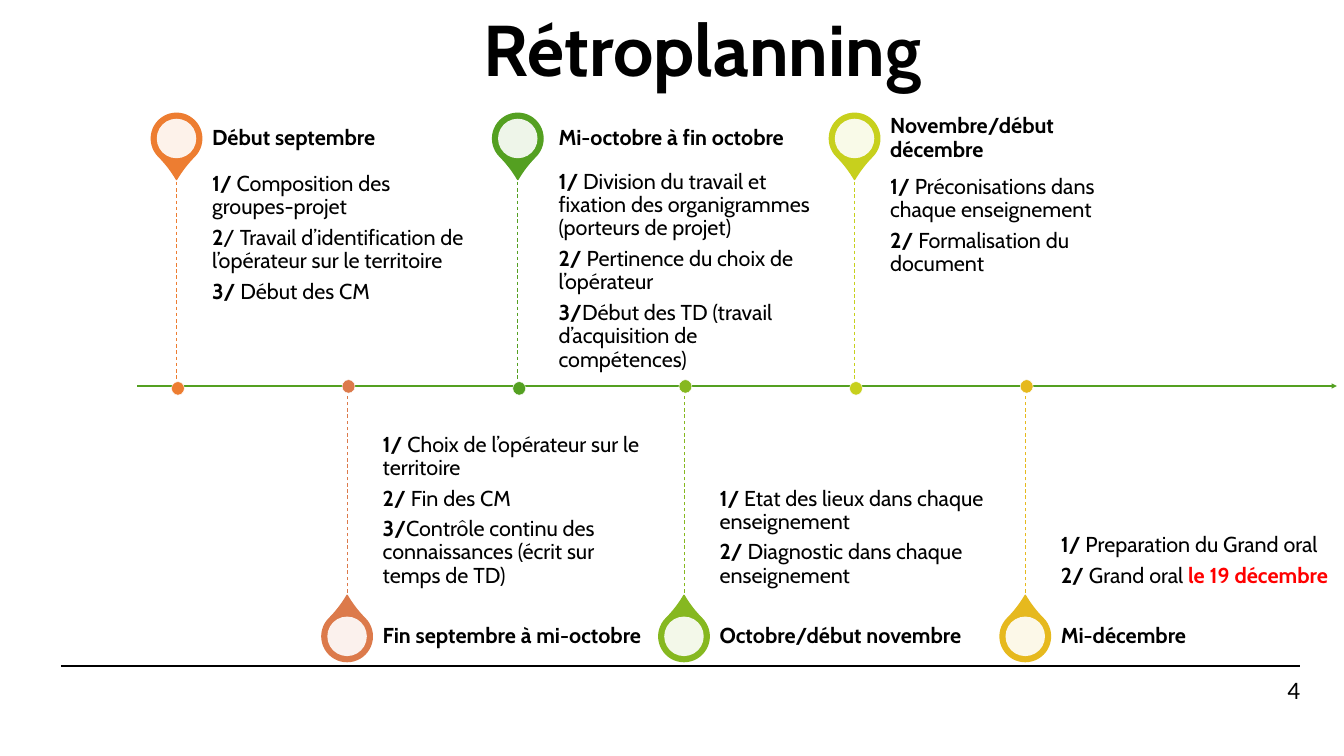
from dataclasses import dataclass

from lxml import etree
from pptx import Presentation
from pptx.dml.color import RGBColor
from pptx.enum import dml, shapes, text
from pptx.oxml.ns import qn
from pptx.util import Pt

BLACK, WHITE, RED, GREEN = "000000", "FFFFFF", "FF0000", "54A021"
AXIS_Y = 429.8
PIN_SIZE, LENS_SIZE = 56.2, 44
LABEL_OFFSET, LABEL_WIDTH = 39.6, 303


@dataclass
class Milestone:
    """Steps are tuples: bold number, plain wording, optional red ending."""
    x: float
    colour: str
    heading: str
    steps: list
    body_top: float = 0
    label_offset: float = LABEL_OFFSET
    label_width: float = LABEL_WIDTH


ABOVE = [
    Milestone(196.6, "ED7D31", "Début septembre", [
        ("1/", " Composition des groupes-projet"),
        ("2", "/ Travail d’identification de l’opérateur sur le territoire"),
        ("3/", " Début des CM")], body_top=180),
    Milestone(576.7, GREEN, "Mi-octobre à fin octobre", [
        ("1/", " Division du travail et fixation des organigrammes (porteurs de projet)"),
        ("2/", " Pertinence du choix de l’opérateur"),
        ("3/", "Début des TD (travail d’acquisition de compétences)")],
        body_top=178, label_offset=45.4, label_width=292),
    Milestone(951.8, "C7D01D", "Novembre/début décembre", [
        ("1/ ", "Préconisations dans chaque enseignement"),
        ("2/ ", "Formalisation du document")], body_top=183.6),
]
BELOW = [
    Milestone(386.6, "DC7A4B", "Fin septembre à mi-octobre", [
        ("1/ ", "Choix de l’opérateur sur le territoire"),
        ("2/ ", "Fin des CM"),
        ("3/", "Contrôle continu des connaissances (écrit sur temps de TD)")]),
    Milestone(761.8, "86B820", "Octobre/début novembre", [
        ("1/ ", "Etat des lieux dans chaque enseignement"),
        ("2/", " Diagnostic dans chaque enseignement")]),
    Milestone(1141.9, "E6B91E", "Mi-décembre", [
        ("1/", " Preparation du Grand oral"),
        ("2/", " Grand oral ", "le 19 décembre")]),
]


def rgb(colour):
    return RGBColor.from_string(colour)


def add_text(slide, box, paragraphs, size=24, font="Cabin", bold=True,
             align=text.PP_ALIGN.LEFT, anchor=text.MSO_ANCHOR.TOP,
             insets=(0, 0, 0, 0), line_spacing=0.9):
    """Each paragraph is a tuple of runs: lead, plain wording, red ending."""
    frame = slide.shapes.add_textbox(*map(Pt, box)).text_frame
    frame.word_wrap = True
    frame.vertical_anchor = anchor
    (frame.margin_left, frame.margin_top,
     frame.margin_right, frame.margin_bottom) = map(Pt, insets)
    styles = [(bold, BLACK), (False, BLACK), (True, RED)]
    for index, runs in enumerate(paragraphs):
        paragraph = frame.add_paragraph() if index else frame.paragraphs[0]
        paragraph.alignment = align
        paragraph.line_spacing = line_spacing
        if index < len(paragraphs) - 1:
            paragraph.space_after = Pt(8.2)
        for wording, (is_bold, colour) in zip(runs, styles):
            run = paragraph.add_run()
            run.text = wording
            run.font.name, run.font.size = font, Pt(size)
            run.font.bold = is_bold
            run.font.color.rgb = rgb(colour)


def add_line(slide, start, end, colour, width, dashed=False, arrow=False):
    line = slide.shapes.add_connector(
        shapes.MSO_CONNECTOR.STRAIGHT, *map(Pt, (*start, *end)))
    line.line.color.rgb = rgb(colour)
    line.line.width = Pt(width)
    if dashed:
        line.line.dash_style = dml.MSO_LINE.DASH
    if arrow:
        etree.SubElement(line.line._get_or_add_ln(), qn("a:tailEnd"), type="triangle")
    etree.SubElement(line._element.spPr, qn("a:effectLst"))


def add_centred_shape(slide, kind, x, y, width, height, fill, outline=None,
                      outline_width=1, alpha=None):
    shape = slide.shapes.add_shape(
        kind, *map(Pt, (x - width / 2, y - height / 2, width, height)))
    shape.shadow.inherit = False
    shape.fill.solid()
    shape.fill.fore_color.rgb = rgb(fill)
    if alpha:
        colour = shape._element.spPr.find(qn("a:solidFill"))[0]
        etree.SubElement(colour, qn("a:alpha"), val=str(alpha * 1000))
    if outline:
        shape.line.color.rgb = rgb(outline)
        shape.line.width = Pt(outline_width)
    else:
        shape.line.fill.background()
    return shape


def add_pin(slide, x, y, colour, rotation):
    pin = add_centred_shape(slide, shapes.MSO_SHAPE.TEAR, x, y, PIN_SIZE, PIN_SIZE,
                            colour, colour, 1.5)
    pin.adjustments[0] = 1.15
    pin.rotation = rotation
    add_centred_shape(slide, shapes.MSO_SHAPE.OVAL, x, y, LENS_SIZE, LENS_SIZE,
                      WHITE, alpha=90)


def add_milestone(slide, milestone, above):
    x, colour = milestone.x, milestone.colour
    left, width = x + milestone.label_offset, milestone.label_width
    if above:
        pin_y, rotation, stem_end, dot_y = 154.2, 135, 195.6, AXIS_Y + 2.6
        body_box = (left, milestone.body_top, width, 265)
        body_insets, body_anchor = (0, 12.2, 12.2, 18), text.MSO_ANCHOR.TOP
    else:
        pin_y, rotation, stem_end, dot_y = 708.5, 315, 666.7, AXIS_Y + 0.4
        body_box = (left, AXIS_Y, width, stem_end - AXIS_Y)
        body_insets, body_anchor = (0, 18, 0, 12.2), text.MSO_ANCHOR.BOTTOM
    add_pin(slide, x, pin_y, colour, rotation)
    add_text(slide, body_box, milestone.steps, insets=body_insets, anchor=body_anchor)
    add_text(slide, (left, pin_y - 42, width, 84), [(milestone.heading,)],
             insets=(0, 0, 12.2, 0), anchor=text.MSO_ANCHOR.MIDDLE)
    add_line(slide, (x, stem_end), (x, dot_y), colour, 1, dashed=True)
    add_centred_shape(slide, shapes.MSO_SHAPE.OVAL, x + 1.6, dot_y, 14.4, 15,
                      colour, WHITE, 0.5)


def add_timeline(slide):
    add_line(slide, (152.6, AXIS_Y), (1489, AXIS_Y), GREEN, 1.5, arrow=True)
    for milestones, above in ((ABOVE, True), (BELOW, False)):
        for milestone in milestones:
            add_milestone(slide, milestone, above)


def add_footer(slide):
    add_line(slide, (67.7, 741.6), (1448, 741.6), BLACK, 2)
    add_text(slide, (1283, 751, 165, 34), [("4",)], size=28, font="Calibri", bold=False,
             align=text.PP_ALIGN.RIGHT, anchor=text.MSO_ANCHOR.MIDDLE, line_spacing=1)


def main():
    presentation = Presentation()
    presentation.slide_width, presentation.slide_height = Pt(1496.88), Pt(841.68)
    slide = presentation.slides.add_slide(presentation.slide_layouts[6])
    add_footer(slide)
    add_text(slide, (71.3, 12.2, 1422.7, 108.7), [("Rétroplanning",)], size=80,
             align=text.PP_ALIGN.CENTER, insets=(7.2, 3.6, 7.2, 3.6))
    add_timeline(slide)
    presentation.save("out.pptx")


if __name__ == "__main__":
    main()
